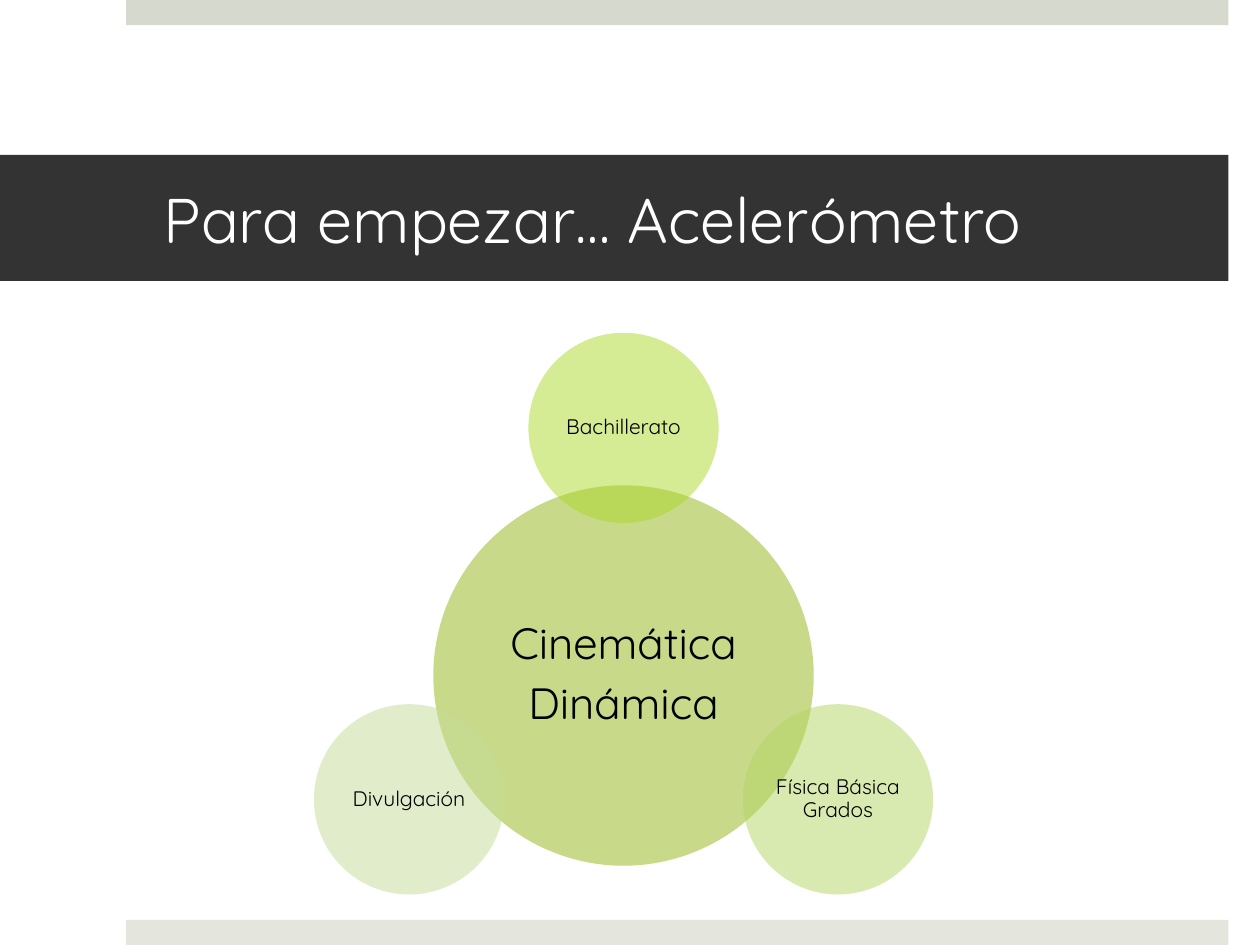
from math import cos, radians, sin

from pptx import Presentation
from pptx.dml.color import RGBColor
from pptx.enum.shapes import MSO_SHAPE as SHAPE
from pptx.enum.text import MSO_ANCHOR as ANCHOR, MSO_AUTO_SIZE as AUTO, PP_ALIGN as ALIGN
from pptx.oxml.ns import qn
from pptx.util import Pt

FONT = "Quicksand"
WHITE = RGBColor(0xFF, 0xFF, 0xFF)
BLACK = RGBColor(0x00, 0x00, 0x00)
CHARCOAL = RGBColor(0x33, 0x33, 0x33)
TOP_BAR = RGBColor(0xD6, 0xD9, 0xCD)
BOTTOM_BAR = RGBColor(0xE4, 0xE6, 0xDE)
OLIVE = RGBColor(0x93, 0xB6, 0x14)
LIME = RGBColor(0xAC, 0xD8, 0x2A)
LEAF = RGBColor(0xB5, 0xD6, 0x64)
SAGE = RGBColor(0xC5, 0xDA, 0x98)

CENTER_X, CENTER_Y = 356.3, 386
HUB_RADIUS = 108.7
ORBIT = 141.5
# Angle in degrees clockwise from the right, colour, wording
SATELLITES = [
    (-90, LIME, "Bachillerato"),
    (30, LEAF, "Física Básica Grados"),
    (150, SAGE, "Divulgación"),
]


def set_font(p, size, color):
    p.font.name = FONT
    p.font.size = Pt(size)
    p.font.color.rgb = color


def set_margins(tf, left, top, right, bottom):
    tf.margin_left, tf.margin_top = Pt(left), Pt(top)
    tf.margin_right, tf.margin_bottom = Pt(right), Pt(bottom)


def add_filled(slide, kind, left, top, width, height, color):
    sp = slide.shapes.add_shape(kind, Pt(left), Pt(top), Pt(width), Pt(height))
    sp.shadow.inherit = False
    sp.fill.solid()
    sp.fill.fore_color.rgb = color
    sp.line.fill.background()
    return sp


def set_title(slide, text):
    title = slide.shapes.title
    title.left, title.top = Pt(0), Pt(88.5)
    title.width, title.height = Pt(702), Pt(72)
    title.fill.solid()
    title.fill.fore_color.rgb = CHARCOAL
    tf = title.text_frame
    tf.text = text
    tf.auto_size = AUTO.NONE
    tf.vertical_anchor = ANCHOR.MIDDLE
    set_margins(tf, 93.6, 3.6, 21.6, 3.6)
    p = tf.paragraphs[0]
    p.alignment = ALIGN.LEFT
    set_font(p, 36, WHITE)


def add_circle(slide, x, y, radius, color, text, size, margin):
    """Draw a half-transparent labelled circle centred on x, y."""
    sp = add_filled(slide, SHAPE.OVAL, x - radius, y - radius, 2 * radius, 2 * radius, color)
    fill_color = sp.element.spPr.find(qn("a:solidFill")).find(qn("a:srgbClr"))
    alpha = fill_color.makeelement(qn("a:alpha"), {"val": "50000"})
    fill_color.append(alpha)
    tf = sp.text_frame
    tf.text = text
    tf.word_wrap = True
    tf.vertical_anchor = ANCHOR.MIDDLE
    set_margins(tf, margin, margin, margin, margin)
    for p in tf.paragraphs:
        p.alignment = ALIGN.CENTER
        p.line_spacing = 0.9
        p.space_after = Pt(0.3 * size)
        set_font(p, size, BLACK)


def main():
    prs = Presentation()
    prs.slide_width, prs.slide_height = Pt(720), Pt(540)
    slide = prs.slides.add_slide(prs.slide_layouts[5])
    for top, color in ((0, TOP_BAR), (525.6, BOTTOM_BAR)):
        add_filled(slide, SHAPE.RECTANGLE, 72, top, 630, 14.4, color)
    set_title(slide, "Para empezar… Acelerómetro")
    add_circle(slide, CENTER_X, CENTER_Y, HUB_RADIUS, OLIVE, "Cinemática\nDinámica", 25, 2.2)
    for angle, color, text in SATELLITES:
        x = CENTER_X + ORBIT * cos(radians(angle))
        y = CENTER_Y + ORBIT * sin(radians(angle))
        add_circle(slide, x, y, HUB_RADIUS / 2, color, text, 12, 1.2)
    prs.save("out.pptx")


if __name__ == "__main__":
    main()
